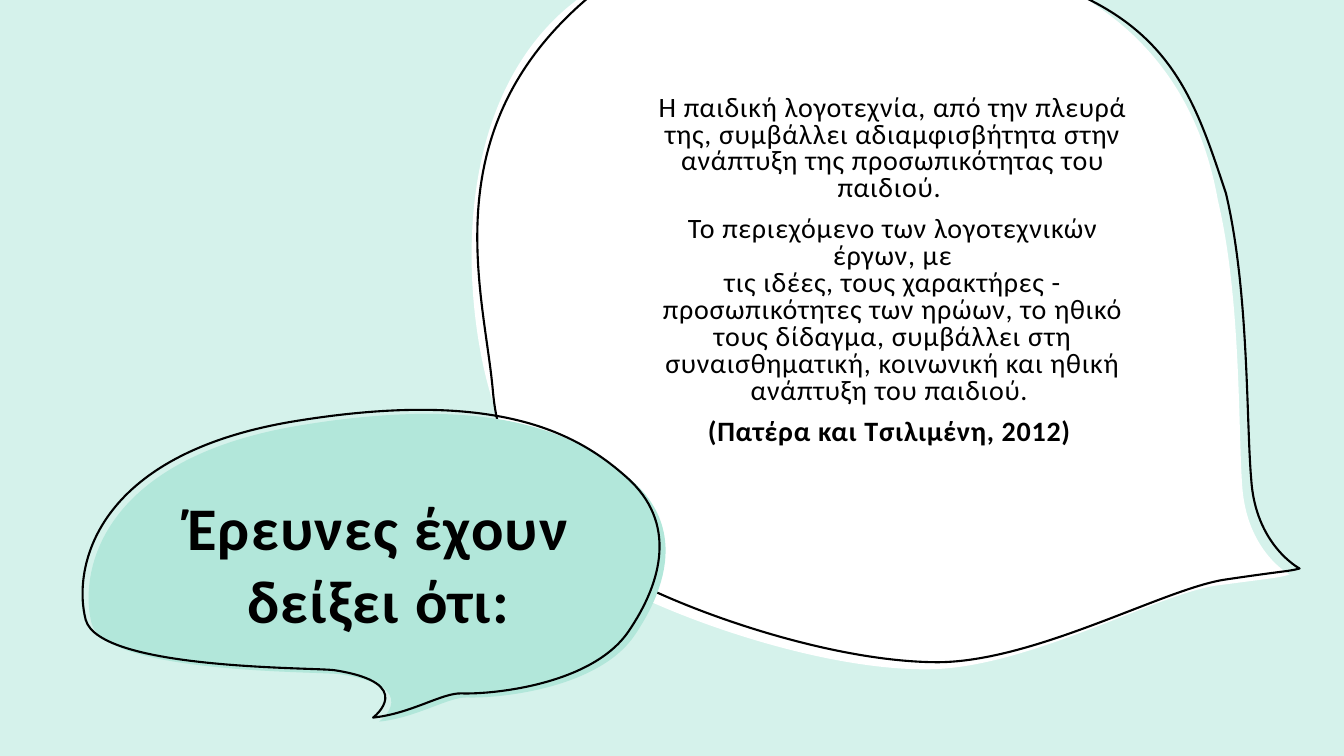
import math

from lxml import etree
from pptx import Presentation, util as u
from pptx.dml.color import RGBColor
from pptx.enum import shapes, text
from pptx.oxml import ns

COLOURS = {"page": "D5F2EB", "mint": "B2E7DA", "white": "FFFFFF", "ink": "000000"}
FONT = "Calibri"

LARGE_FILL = [
    (5.72, 0), (10.79, 0), (10.95, 0.11),
    (11.49, 0.5, 11.92, 1.09, 12.08, 1.99), (12.31, 2.96, 12.28, 4.24, 12.32, 4.81),
    (12.36, 5.47, 12.79, 5.7, 12.79, 5.7), (12.69, 5.73, 12.67, 5.73, 12.06, 5.81),
    (11.46, 5.9, 10.19, 6.63, 9.21, 6.64), (8.24, 6.65, 6.94, 6.22, 6.22, 5.86),
    (5.51, 5.5, 5.24, 5.03, 4.9, 4.02), (4.62, 3.2, 4.39, 1.15, 5.61, 0.09),
]
LARGE_OUTLINE = [
    (10.79, -0.01),
    (11.68, 0.43, 11.89, 1.11, 12.16, 1.92), (12.39, 2.9, 12.36, 4.18, 12.41, 4.75),
    (12.45, 5.41, 12.89, 5.64, 12.89, 5.64), (12.78, 5.67, 12.76, 5.66, 12.15, 5.75),
    (11.55, 5.84, 10.28, 6.56, 9.31, 6.57), (8.33, 6.57, 7.03, 6.14, 6.31, 5.78),
    (5.6, 5.41, 4.98, 4.86, 4.89, 3.89), (4.81, 2.93, 4.27, 1.32, 5.82, -0.01),
]
SMALL_BUBBLE = [
    (3.76, 7.16),
    (4.14, 7.12, 4.45, 6.91, 4.64, 6.92), (4.96, 6.93, 5.93, 6.83, 6.29, 6.31),
    (6.64, 5.8, 6.77, 5.22, 6.28, 4.78), (5.79, 4.34, 4.99, 3.89, 2.98, 4.22),
    (0.98, 4.55, 0.78, 5.69, 0.91, 6.19), (1.05, 6.69, 3.19, 6.66, 3.38, 6.69),
    (4.21, 6.82, 3.76, 7.16, 3.76, 7.16),
]
TITLE = "Έρευνες έχουν δείξει ότι:"
BODY = [
    "Η παιδική λογοτεχνία, από την πλευρά της, συμβάλλει αδιαμφισβήτητα στην\v"
    "ανάπτυξη της προσωπικότητας του παιδιού. ",
    "Το περιεχόμενο των λογοτεχνικών έργων, με\vτις ιδέες, τους χαρακτήρες - "
    "προσωπικότητες των ηρώων, το ηθικό τους δίδαγμα, συμβάλλει στη "
    "συναισθηματική, κοινωνική και ηθική ανάπτυξη του παιδιού. ",
    "(Πατέρα και Τσιλιμένη, 2012) ",
]


def colour(name):
    """Return the named colour of the palette."""
    return RGBColor.from_string(COLOURS[name])


def paint(shape, fill=None, line=None):
    """Give a shape a fill or an outline, and no shadow."""
    shape.shadow.inherit = False
    if fill:
        shape.fill.solid()
        shape.fill.fore_color.rgb = colour(fill)
    else:
        shape.fill.background()
    if line:
        shape.line.color.rgb = colour(line)
        shape.line.width = u.Pt(1.5)
    else:
        shape.line.fill.background()


def turn_back(x, y, box, rotation):
    """Undo a rotation about the middle of a box, relative to its corner."""
    left, top, width, height = box
    angle = math.radians(-rotation)
    dx, dy = x - left - width / 2, y - top - height / 2
    return (width / 2 + dx * math.cos(angle) - dy * math.sin(angle),
            height / 2 + dx * math.sin(angle) + dy * math.cos(angle))


def draw_curves(outline, segments, box, rotation, closed):
    """Write points, lines and cubic curves into a freeform outline."""
    for child in list(outline):
        outline.remove(child)
    for index, segment in enumerate(segments):
        tag = "a:cubicBezTo" if len(segment) == 6 else "a:lnTo" if index else "a:moveTo"
        command = etree.SubElement(outline, ns.qn(tag))
        for x, y in zip(segment[::2], segment[1::2]):
            x, y = turn_back(x, y, box, rotation)
            etree.SubElement(command, ns.qn("a:pt"), x=str(u.Inches(x)), y=str(u.Inches(y)))
    if closed:
        etree.SubElement(outline, ns.qn("a:close"))


def add_bubble(page, box, segments, rotation=0, closed=True, **style):
    """Draw a curved speech bubble that fills its box."""
    left, top, width, height = map(u.Inches, box)
    builder = page.shapes.build_freeform(left, top)
    builder.add_line_segments([(left + width, top), (left + width, top + height)])
    bubble = builder.convert_to_shape()
    outline = bubble._element.find(".//" + ns.qn("a:path"))
    draw_curves(outline, segments, box, rotation, closed)
    bubble.rotation = rotation
    paint(bubble, **style)


def add_text(page, box, lines, size, tracking, anchor, line_spacing=1.0):
    """Place centred paragraphs in a box and return them."""
    frame = page.shapes.add_textbox(*map(u.Inches, box)).text_frame
    frame.word_wrap = True
    frame.vertical_anchor = anchor
    for index, line in enumerate(lines):
        para = frame.add_paragraph() if index else frame.paragraphs[0]
        para.text = line
        para.alignment = text.PP_ALIGN.CENTER
        para.line_spacing = line_spacing
        if index:
            para.space_before = u.Pt(10)
        para.font.name = FONT
        para.font.size = u.Pt(size)
        para.font.color.rgb = colour("ink")
        for span in para.runs:
            span.font._element.set("spc", str(round(tracking * 100)))
    return frame.paragraphs


def add_background(page, box):
    """Fill the page with its pale colour."""
    area = page.shapes.add_shape(shapes.MSO_SHAPE.RECTANGLE, *box)
    paint(area, fill="page")


def add_large_bubble(page):
    """Draw the white bubble and its tilted outline."""
    add_bubble(page, (4.68, 0, 8.11, 6.64), LARGE_FILL, fill="white")
    add_bubble(page, (4.8, -0.23, 7.88, 6.84), LARGE_OUTLINE,
               rotation=355.5, closed=False, line="ink")


def add_small_bubble(page, box, shift):
    """Draw the mint bubble and its shifted outline."""
    left, top, width, height = box
    dx, dy = shift
    moved = [tuple(value + shift[index % 2] for index, value in enumerate(segment))
             for segment in SMALL_BUBBLE]
    add_bubble(page, box, SMALL_BUBBLE, fill="mint")
    add_bubble(page, (left + dx, top + dy, width, height), moved, line="ink")


def main():
    """Build and save the slide."""
    deck = Presentation()
    deck.slide_width, deck.slide_height = u.Inches(13.33), u.Inches(7.5)
    page = deck.slides.add_slide(deck.slide_layouts[6])
    add_background(page, (0, 0, deck.slide_width, deck.slide_height))
    add_large_bubble(page)
    add_small_bubble(page, (0.88, 4.1, 5.72, 3.06), (-0.06, -0.04))
    title = add_text(page, (1.39, 4.66, 4.73, 1.85), [TITLE], 43.2, 1, text.MSO_ANCHOR.MIDDLE)
    title[0].font.bold = True
    body = add_text(page, (6.33, 0.9, 5.05, 4.87), BODY, 20, 0.5, text.MSO_ANCHOR.TOP, 0.8)
    body[-1].font.bold = True
    deck.save("out.pptx")


if __name__ == "__main__":
    main()
